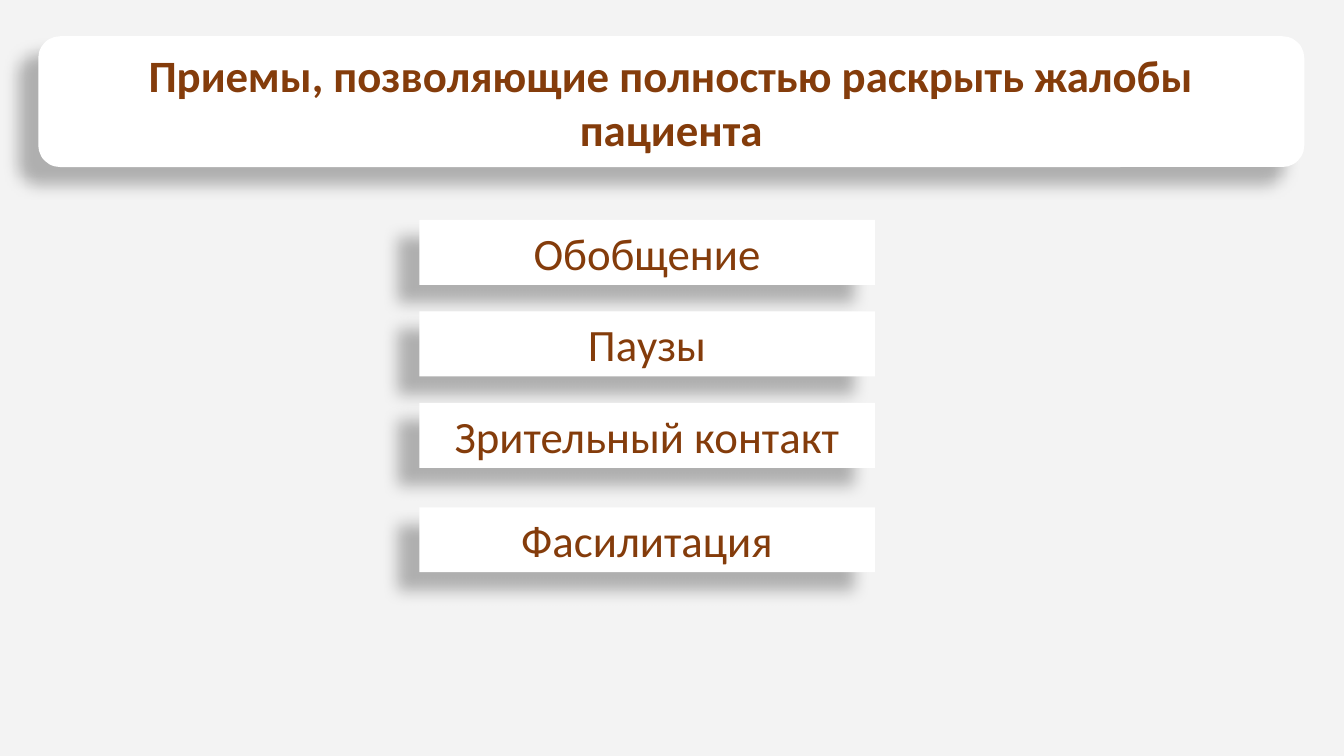
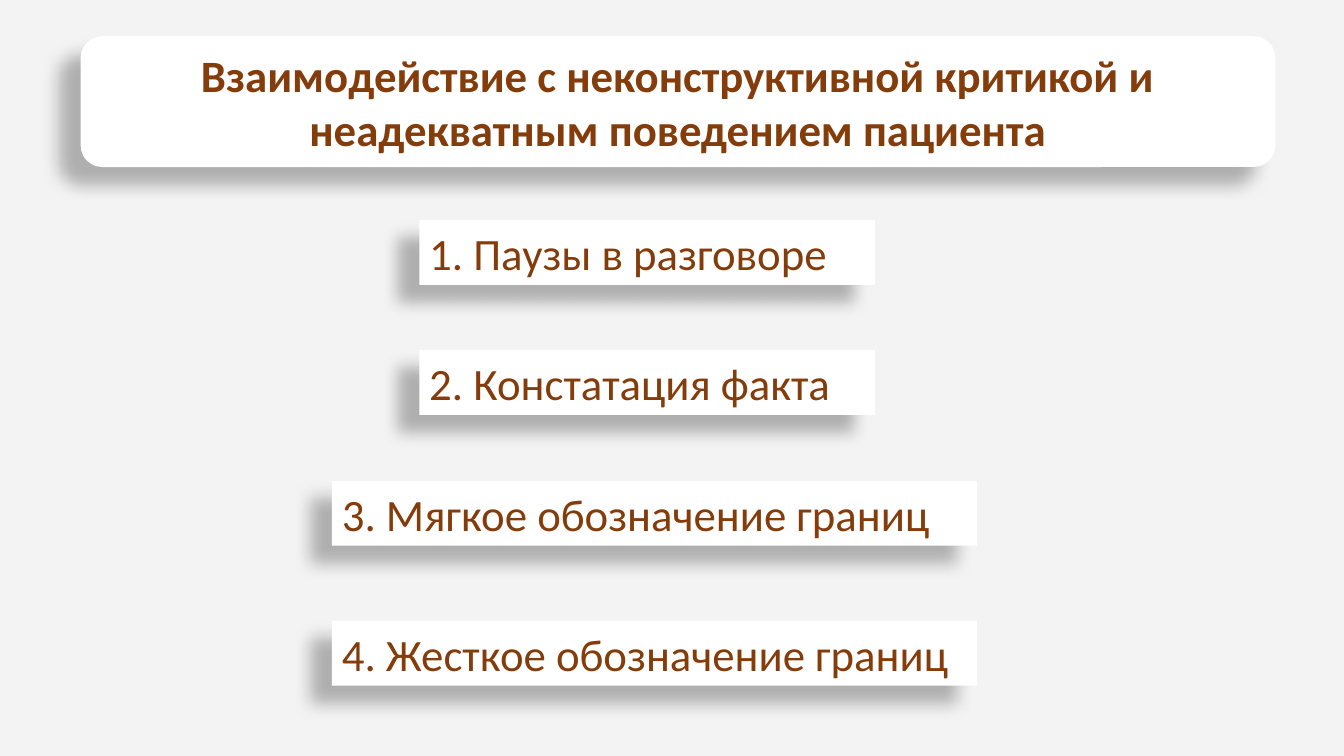
from dataclasses import dataclass

from lxml.etree import SubElement
from pptx import Presentation
from pptx.dml.color import RGBColor
from pptx.enum.shapes import MSO_SHAPE as Preset
from pptx.enum.text import MSO_ANCHOR as Anchor, MSO_AUTO_SIZE as AutoSize, PP_ALIGN as Align
from pptx.oxml.ns import qn
from pptx.util import Inches, Pt


@dataclass(frozen=True)
class Theme:
    background: RGBColor = RGBColor(0xF3, 0xF3, 0xF3)
    card: RGBColor = RGBColor(0xFF, 0xFF, 0xFF)
    text: RGBColor = RGBColor(0x84, 0x3C, 0x0B)
    shadow: str = "000000"
    font: str = "Calibri"
    size: Pt = Pt(32)


theme = Theme()
presentation = Presentation()
presentation.slide_width, presentation.slide_height = Inches(13.33), Inches(7.5)
column = presentation.slide_width / 100
row = presentation.slide_height / 100


def drop_shadow(shape):
    """Cast a soft shadow down and to the left."""
    shape.shadow.inherit = False
    effects = shape._element.spPr.find(qn("a:effectLst"))
    shadow = SubElement(effects, qn("a:outerShdw"), blurRad=str(Pt(11.8)), dist=str(Pt(19.7)),
                        dir=str(141 * 60000), algn="tr", rotWithShape="0")
    color = SubElement(shadow, qn("a:srgbClr"), val=theme.shadow)
    SubElement(color, qn("a:alpha"), val="28000")


def add_card(slide, text, left, top, width, height, preset=Preset.RECTANGLE,
             bold=False, align=Align.CENTER):
    """Place a white text card, measured in columns and rows."""
    shape = slide.shapes.add_shape(preset, round(left * column), round(top * row),
                                   round(width * column), round(height * row))
    shape.fill.solid()
    shape.fill.fore_color.rgb = theme.card
    shape.line.fill.background()
    drop_shadow(shape)
    frame = shape.text_frame
    frame.word_wrap = True
    frame.auto_size = AutoSize.SHAPE_TO_FIT_TEXT
    frame.vertical_anchor = Anchor.MIDDLE
    paragraph = frame.paragraphs[0]
    paragraph.alignment = align
    run = paragraph.add_run()
    run.text = text
    run.font.name, run.font.size, run.font.bold = theme.font, theme.size, bold
    run.font.color.rgb = theme.text


TITLE_TOP, TITLE_HEIGHT, ITEM_HEIGHT = 4.8, 17.3, 8.6
NARROW, WIDE = (31.2, 33.9), (24.7, 48)  # left edge and width of an item

# Title, its left edge and width, item alignment, items as (text, span, top)
SLIDES = [
    ("Приемы, позволяющие полностью раскрыть жалобы пациента", (2.85, 94.2), Align.CENTER, [
        ("Обобщение", NARROW, 29.1),
        ("Паузы", NARROW, 41.2),
        ("Зрительный контакт", NARROW, 53.3),
        ("Фасилитация", NARROW, 67.1),
    ]),
    ("Взаимодействие с неконструктивной критикой и неадекватным поведением пациента",
     (6, 88.9), Align.LEFT, [
         ("1. Паузы в разговоре", NARROW, 29.1),
         ("2. Констатация факта", NARROW, 46.3),
         ("3. Мягкое обозначение границ", WIDE, 63.6),
         ("4. Жесткое обозначение границ", WIDE, 82.1),
     ]),
]

for title, (title_left, title_width), item_align, items in SLIDES:
    slide = presentation.slides.add_slide(presentation.slide_layouts[6])
    slide.background.fill.solid()
    slide.background.fill.fore_color.rgb = theme.background
    add_card(slide, title, title_left, TITLE_TOP, title_width, TITLE_HEIGHT,
             preset=Preset.ROUNDED_RECTANGLE, bold=True)
    for text, (left, width), top in items:
        add_card(slide, text, left, top, width, ITEM_HEIGHT, align=item_align)

presentation.save("out.pptx")
